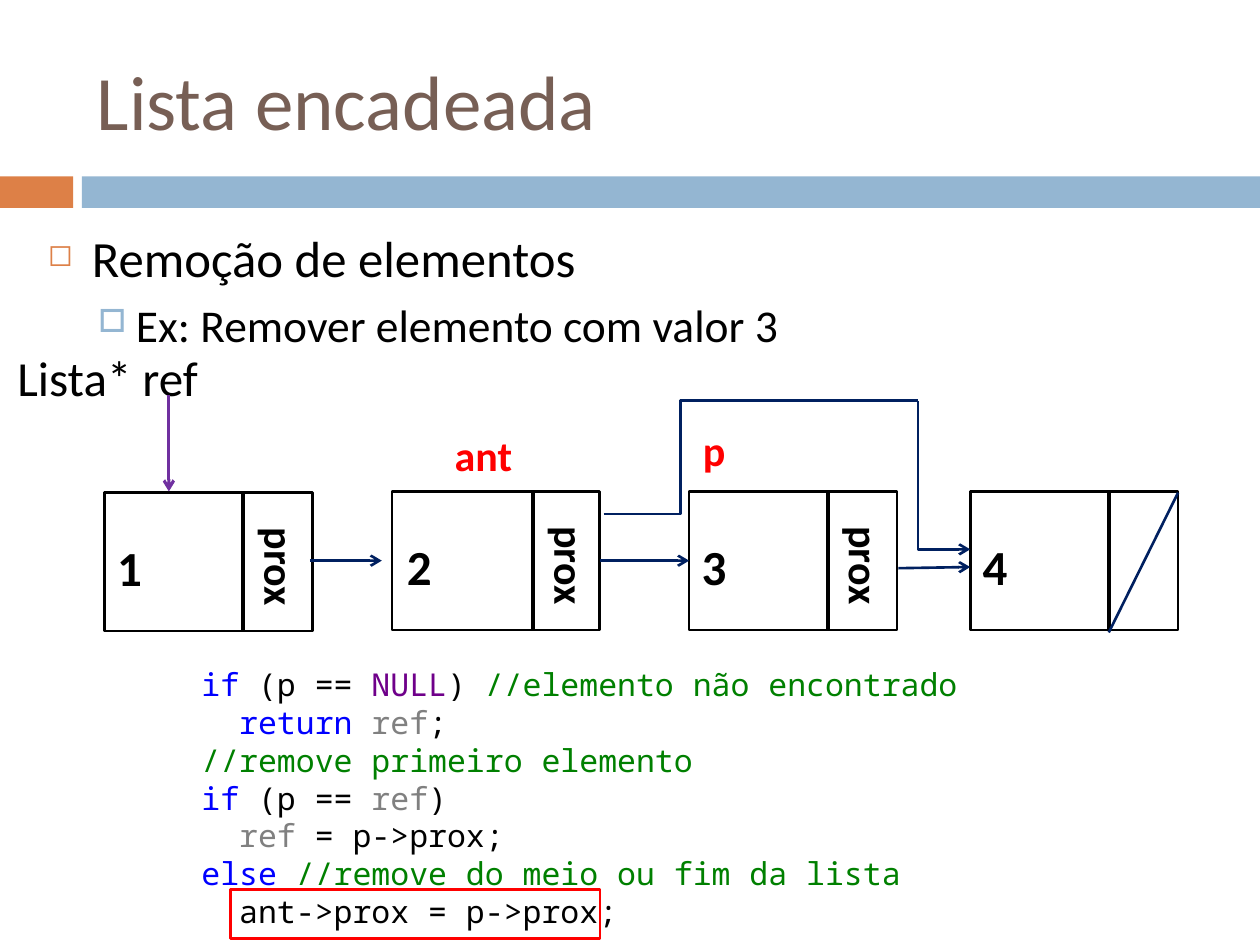
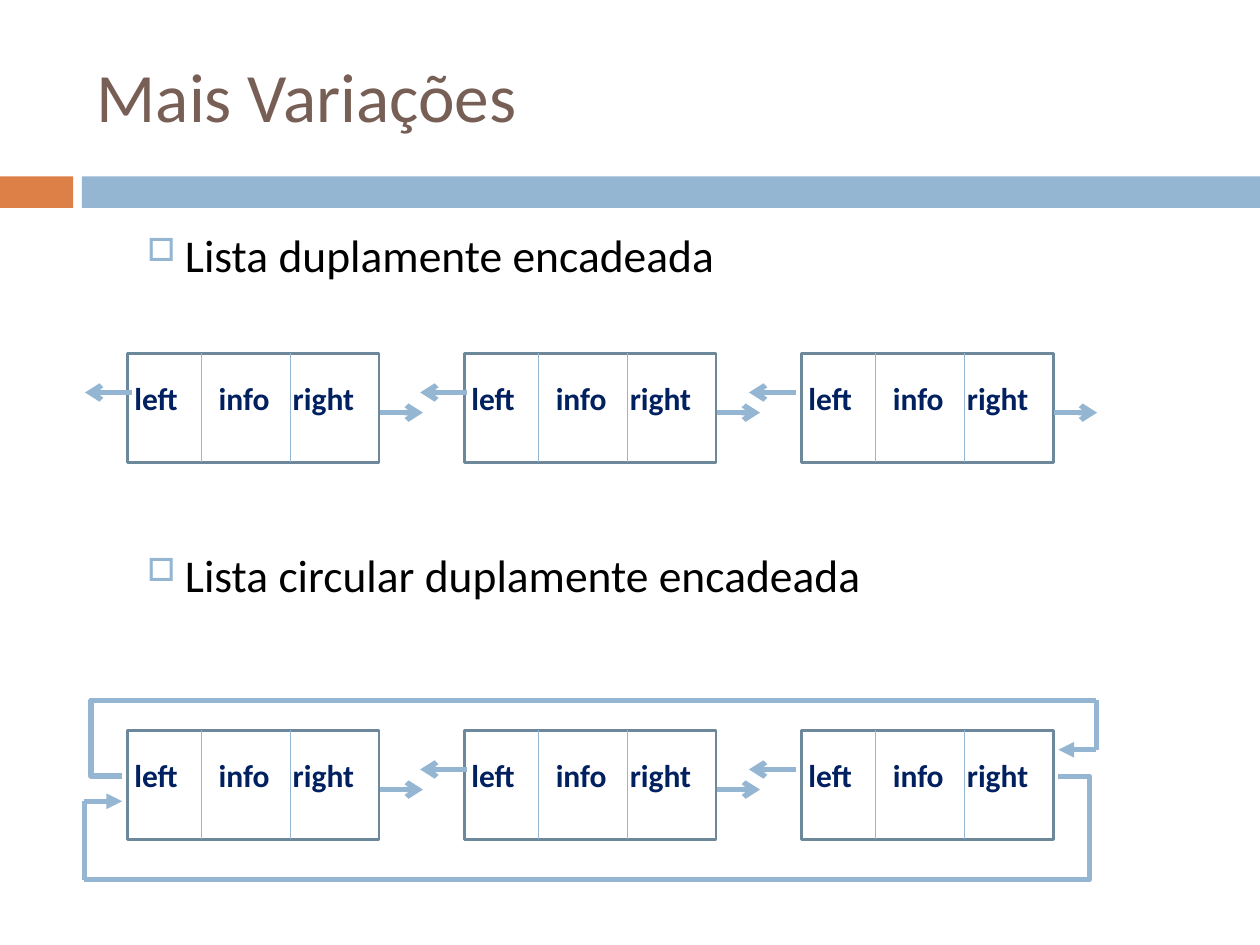
from pptx import Presentation
from pptx.dml.color import RGBColor
from pptx.enum.shapes import MSO_CONNECTOR, MSO_SHAPE
from pptx.enum.text import MSO_ANCHOR
from pptx.oxml.ns import qn
from pptx.util import Pt
from lxml.etree import SubElement

COLORS = {
    "orange": "DD8047", "blue": "94B6D2", "title": "775F55", "black": "000000",
    "navy": "002060", "purple": "7030A0", "red": "FF0000", "frame": "6D879B",
    "keyword": "0000FF", "macro": "6F008A", "comment": "008000", "param": "808080",
}
SANS, MONO = "Calibri", "Noto Sans Mono"

# Bullet levels: character, colour, size in %, left margin, hanging, text size
BULLETS = [("◻", "orange", 60, 25.2, 25.2, 29), ("□", "blue", 70, 50.4, 21.6, 26)]

CODE = [
    [("if", "keyword"), (" (p == ", "black"), ("NULL", "macro"), (")", "black"),
     (" //elemento não encontrado", "comment")],
    [("  return", "keyword"), (" ", "black"), ("ref", "param"), (";", "black")],
    [("//remove primeiro elemento", "comment")],
    [("if", "keyword"), (" (p == ", "black"), ("ref", "param"), (")", "black")],
    [("  ref", "param"), (" = p->prox;", "black")],
    [("else", "keyword"), (" ", "black"), ("//remove do meio ou fim da lista", "comment")],
    [("  ant->prox = p->prox;", "black")],
]

# Value, left, top, divider x, value left
NODES = [
    ("1", 59.8, 281.5, 139, 59.8),
    ("2", 223.9, 280.8, 304.6, 225.4),
    ("3", 393.8, 280.8, 473, 393.8),
    ("4", 554.4, 280.8, 633.6, 554.4),
]
NODE_W, NODE_H = 118.8, 79.2

DOUBLE_LEFT, DOUBLE_STEP = 72.7, 192.6
DOUBLE_W, DOUBLE_H = 144, 62.4
LEFT_ARROW_STARTS = [75.6, 267.1, 455]


def rgb(name):
    return RGBColor.from_string(COLORS[name])


def style_font(font, color, **fmt):
    for name, value in fmt.items():
        setattr(font, name, value)
    font.color.rgb = rgb(color)


def add_box(slide, left, top, width, height, fill=None, line=None, weight=1.5):
    sp = slide.shapes.add_shape(MSO_SHAPE.RECTANGLE, Pt(left), Pt(top), Pt(width), Pt(height))
    sp.shadow.inherit = False
    if fill:
        sp.fill.solid()
        sp.fill.fore_color.rgb = rgb(fill)
    else:
        sp.fill.background()
    if line:
        sp.line.color.rgb = rgb(line)
        sp.line.width = Pt(weight)
    else:
        sp.line.fill.background()


def add_line(slide, begin, end, color, weight, tail=None, bend=None):
    """Join two points; bend is the place of an elbow's middle leg, in % of the width."""
    kind = MSO_CONNECTOR.STRAIGHT if bend is None else MSO_CONNECTOR.ELBOW
    line = slide.shapes.add_connector(kind, *map(Pt, (*begin, *end)))
    line.line.color.rgb = rgb(color)
    line.line.width = Pt(weight)
    sp_pr = line.element.spPr
    if tail:
        SubElement(sp_pr.find(qn("a:ln")), qn("a:tailEnd"), type=tail)
    if bend is not None:
        guides = sp_pr.find(qn("a:prstGeom")).find(qn("a:avLst"))
        SubElement(guides, qn("a:gd"), name="adj1", fmla=f"val {round(bend * 1000)}")
    SubElement(sp_pr, qn("a:effectLst"))


def add_frame(slide, left, top, width, height):
    sp = slide.shapes.add_textbox(Pt(left), Pt(top), Pt(width), Pt(height))
    sp.text_frame.word_wrap = True
    return sp


def add_label(slide, text, left, top, width, height, size, color, bold=True, rotation=0):
    sp = add_frame(slide, left, top, width, height)
    sp.rotation = rotation
    p = sp.text_frame.paragraphs[0]
    p.text = text
    style_font(p.font, color, name=SANS, size=Pt(size), bold=bold)
    return sp


def add_bullets(slide, left, width, items):
    """Items are (text, level, space before)."""
    tf = add_frame(slide, left, 126, width, 354).text_frame
    for i, (text, level, space) in enumerate(items):
        p = tf.add_paragraph() if i else tf.paragraphs[0]
        p.text = text
        char, color, percent, margin, hanging, size = BULLETS[level]
        p.space_before = Pt(space)
        p_pr = p._p.get_or_add_pPr()
        p_pr.set("marL", str(Pt(margin)))
        p_pr.set("indent", str(-Pt(hanging)))
        SubElement(SubElement(p_pr, qn("a:buClr")), qn("a:srgbClr"), val=COLORS[color])
        SubElement(p_pr, qn("a:buSzPct"), val=str(percent * 1000))
        SubElement(p_pr, qn("a:buChar"), char=char)
        style_font(p.font, "black", name=SANS, size=Pt(size))


def add_code(slide):
    tf = add_frame(slide, 108, 376.6, 496.8, 159.8).text_frame
    for i, tokens in enumerate(CODE):
        p = tf.add_paragraph() if i else tf.paragraphs[0]
        for text, color in tokens:
            r = p.add_run()
            r.text = text
            style_font(r.font, color, name=MONO, size=Pt(18))


def add_slide(prs, title, top, size):
    slide = prs.slides.add_slide(prs.slide_layouts[6])
    add_box(slide, 0, 100.8, 41.8, 18, fill="orange")
    add_box(slide, 46.8, 100.8, 673.2, 18, fill="blue")
    sp = add_label(slide, title, 48.2, top, 642.2, 77.8, size, "title", bold=False)
    sp.text_frame.vertical_anchor = MSO_ANCHOR.MIDDLE
    return slide


def add_node(slide, value, left, top, divider, value_left):
    add_box(slide, left, top, NODE_W, NODE_H, line="black")
    add_line(slide, (divider, top), (divider, top + NODE_H), "black", 2.5)
    add_label(slide, value, value_left, top + 22.3, 90, 41, 28, "black")
    if value != NODES[-1][0]:
        add_label(slide, "prox", divider - 8.6, top + 25.2, 60.5, 36, 24, "black", rotation=90)


def add_double_list(slide, top, circular=False):
    last = len(LEFT_ARROW_STARTS) - 1
    for i, start in enumerate(LEFT_ARROW_STARTS):
        left = DOUBLE_LEFT + i * DOUBLE_STEP
        add_box(slide, left, top, DOUBLE_W, DOUBLE_H, line="frame")
        for x in (left + 42.5, left + 93.4):
            add_line(slide, (x, top), (x, top + 62), "blue", 0.79)
        for text, offset in (("left", -3), ("info", 45.2), ("right", 87.5)):
            add_label(slide, text, left + offset, top + 10.8, 60, 29, 18, "navy")
        if i > 0 or not circular:
            y = top + 22.3
            add_line(slide, (start, y), (start - 27, y), "blue", 3, "arrow")
        if i < last or not circular:
            y = top + 33.8
            add_line(slide, (left + 144.4, y), (left + 169, y), "blue", 3, "arrow")


def add_removal_slide(prs):
    slide = add_slide(prs, "Lista encadeada", 18, 44)
    add_bullets(slide, 20.2, 663, [("Remoção de elementos", 0, 0),
                                   ("Ex: Remover elemento com valor 3", 1, 5.5)])
    for node in NODES:
        add_node(slide, *node)
    add_line(slide, (633.6, 361.4), (673.2, 281.5), "navy", 1.5)

    add_label(slide, "Lista* ref", 2.9, 195.1, 130, 41, 28, "black", bold=False)
    add_label(slide, "ant", 252.7, 241.9, 78.5, 36, 24, "red")
    add_label(slide, "p", 394.6, 239, 78.5, 36, 24, "red")

    add_line(slide, (96.5, 226), (96.5, 280.8), "purple", 1.75, "arrow")
    for begin, end in (((177.1, 320.4), (218.2, 320.4)),
                       ((342.7, 320.4), (393.8, 320.4)),
                       ((513.4, 324.7), (554.4, 324))):
        add_line(slide, begin, end, "navy", 1.5, "arrow")
    add_line(slide, (344.9, 293.8), (524.5, 229), "navy", 1.5, bend=24.6)
    add_line(slide, (524.5, 229), (554.4, 313.9), "navy", 1.5, "arrow", bend=0)

    add_code(slide)
    add_box(slide, 131.8, 508.3, 211, 28.1, line="red")


def add_variations_slide(prs):
    slide = add_slide(prs, "Mais Variações", 15, 39.6)
    add_bullets(slide, 48.2, 642.2, [("Lista duplamente encadeada", 1, 0),
                                     ("Lista circular duplamente encadeada", 1, 151.7)])
    add_double_list(slide, 202)
    add_double_list(slide, 417.4, circular=True)

    # Last node back to the first, below the list
    add_line(slide, (604.8, 443.5), (48.2, 502.6), "blue", 3, bend=-3.2)
    add_line(slide, (48.2, 502.6), (48.2, 457.9), "blue", 3)
    add_line(slide, (48.2, 457.9), (69.8, 457.9), "blue", 3, "triangle")
    # First node round to the last, above the list
    add_line(slide, (69.8, 443.5), (626.4, 400.3), "blue", 3, bend=-3.2)
    add_line(slide, (626.4, 400.3), (626.4, 428.4), "blue", 3)
    add_line(slide, (626.4, 428.4), (604.8, 428.4), "blue", 3, "triangle")


def main():
    prs = Presentation()
    prs.slide_width, prs.slide_height = Pt(720), Pt(540)
    add_removal_slide(prs)
    add_variations_slide(prs)
    prs.save("out.pptx")


if __name__ == "__main__":
    main()
